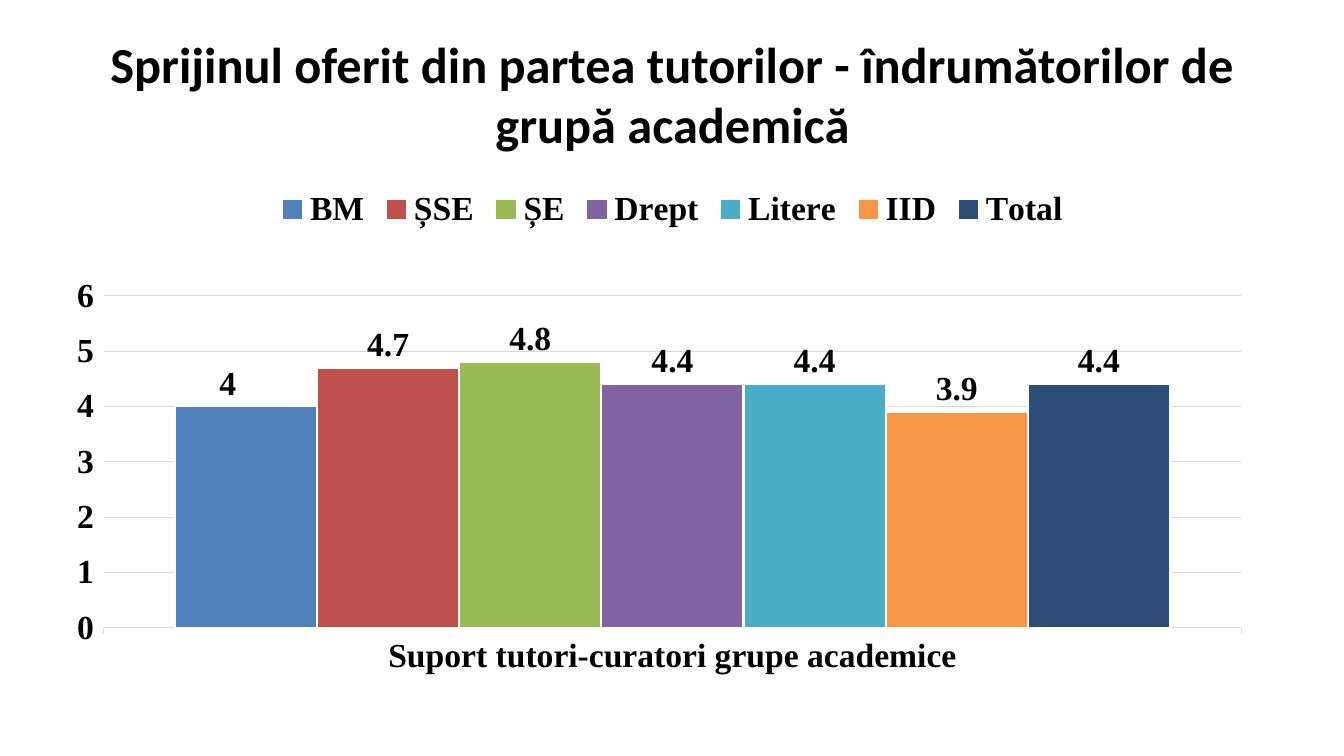
from lxml import etree
from pptx import Presentation
from pptx.chart.data import CategoryChartData
from pptx.dml.color import RGBColor
from pptx.enum.chart import XL_CHART_TYPE, XL_LABEL_POSITION, XL_LEGEND_POSITION
from pptx.enum.text import MSO_ANCHOR, PP_ALIGN
from pptx.oxml import parse_xml
from pptx.util import Inches, Pt

COLUMNS = XL_CHART_TYPE.COLUMN_CLUSTERED
OUTSIDE = XL_LABEL_POSITION.OUTSIDE_END
TOP = XL_LEGEND_POSITION.TOP
CENTER = PP_ALIGN.CENTER
MIDDLE = MSO_ANCHOR.MIDDLE
CHART_NS = "http://schemas.openxmlformats.org/drawingml/2006/chart"

COLORS = {
    "text": "000000",
    "grid": "D9D9D9",
    "edge": "FFFFFF",
    "BM": "4F81BD",
    "ȘSE": "C0504D",
    "ȘE": "9BBB59",
    "Drept": "8064A2",
    "Litere": "4BACC6",
    "IID": "F79646",
    "Total": "2C4D75",
}
SCORES = {"BM": 4, "ȘSE": 4.7, "ȘE": 4.8, "Drept": 4.4,
          "Litere": 4.4, "IID": 3.9, "Total": 4.4}


def rgb(name):
    return RGBColor.from_string(COLORS[name])


def style_font(font, name, size):
    font.name = name
    font.size = Pt(size)
    font.bold = True
    font.color.rgb = rgb("text")


def style_chart_font(font):
    style_font(font, "Times New Roman", 24)


def style_line(line, color, width):
    line.color.rgb = rgb(color)
    line.width = Pt(width)


def manual_layout(**settings):
    layout = etree.Element(f"{{{CHART_NS}}}layout", nsmap={"c": CHART_NS})
    manual = etree.SubElement(layout, f"{{{CHART_NS}}}manualLayout")
    for tag, value in settings.items():
        etree.SubElement(manual, f"{{{CHART_NS}}}{tag}").set("val", str(value))
    return parse_xml(etree.tostring(layout))


def add_title(slide, text):
    title = slide.shapes.add_textbox(Inches(0.67), Inches(0.3), Inches(12), Inches(1.25))
    frame = title.text_frame
    frame.word_wrap = True
    frame.vertical_anchor = MIDDLE
    frame.text = text
    paragraph = frame.paragraphs[0]
    paragraph.alignment = CENTER
    style_font(paragraph.runs[0].font, "Calibri", 36)


def style_axes(chart):
    for axis in (chart.category_axis, chart.value_axis):
        style_chart_font(axis.tick_labels.font)
    style_line(chart.category_axis.format.line, "grid", 0.75)
    scores = chart.value_axis
    scores.minimum_scale, scores.maximum_scale, scores.major_unit = 0, 6, 1
    scores.format.line.fill.background()
    scores.has_major_gridlines = True
    style_line(scores.major_gridlines.format.line, "grid", 0.75)


def style_series(series):
    series.format.fill.solid()
    series.format.fill.fore_color.rgb = rgb(series.name)
    style_line(series.format.line, "edge", 1.5)
    labels = series.data_labels
    labels.show_value = True
    labels.position = OUTSIDE
    style_chart_font(labels.font)


def shift_first_label(series, offset):
    label = series.points[0].data_label
    style_chart_font(label.font)
    label.position = OUTSIDE
    element = series.data_labels._element.find(f"{{{CHART_NS}}}dLbl")
    element.insert(1, manual_layout(x=offset, y=0))


def place_plot(chart, x, y, w, h):
    plot_area = chart._chartSpace.chart.plotArea
    for layout in plot_area.findall(f"{{{CHART_NS}}}layout"):
        plot_area.remove(layout)
    plot_area.insert(0, manual_layout(layoutTarget="inner", xMode="edge", yMode="edge",
                                      x=x, y=y, w=w, h=h))


def add_score_chart(slide):
    data = CategoryChartData()
    data.categories = ["Suport tutori-curatori grupe academice"]
    for faculty, score in SCORES.items():
        data.add_series(faculty, [score])
    chart = slide.shapes.add_chart(COLUMNS, Inches(0.67), Inches(1.75),
                                   Inches(12), Inches(4.95), data).chart
    style_chart_font(chart.font)
    chart.has_title = False
    chart.has_legend = True
    chart.legend.position = TOP
    chart.legend.include_in_layout = False
    style_chart_font(chart.legend.font)
    style_axes(chart)
    plot = chart.plots[0]
    plot.gap_width = 100
    plot.overlap = 0
    plot.vary_by_categories = False
    for series in plot.series:
        style_series(series)
    shift_first_label(plot.series[0], -0.015)
    place_plot(chart, 0.03, 0.24, 0.94, 0.667)


def main():
    deck = Presentation()
    deck.slide_width = Inches(13.33)
    deck.slide_height = Inches(7.5)
    slide = deck.slides.add_slide(deck.slide_layouts[6])
    add_title(slide, "Sprijinul oferit din partea tutorilor - îndrumătorilor de grupă academică")
    add_score_chart(slide)
    deck.save("out.pptx")


if __name__ == "__main__":
    main()
